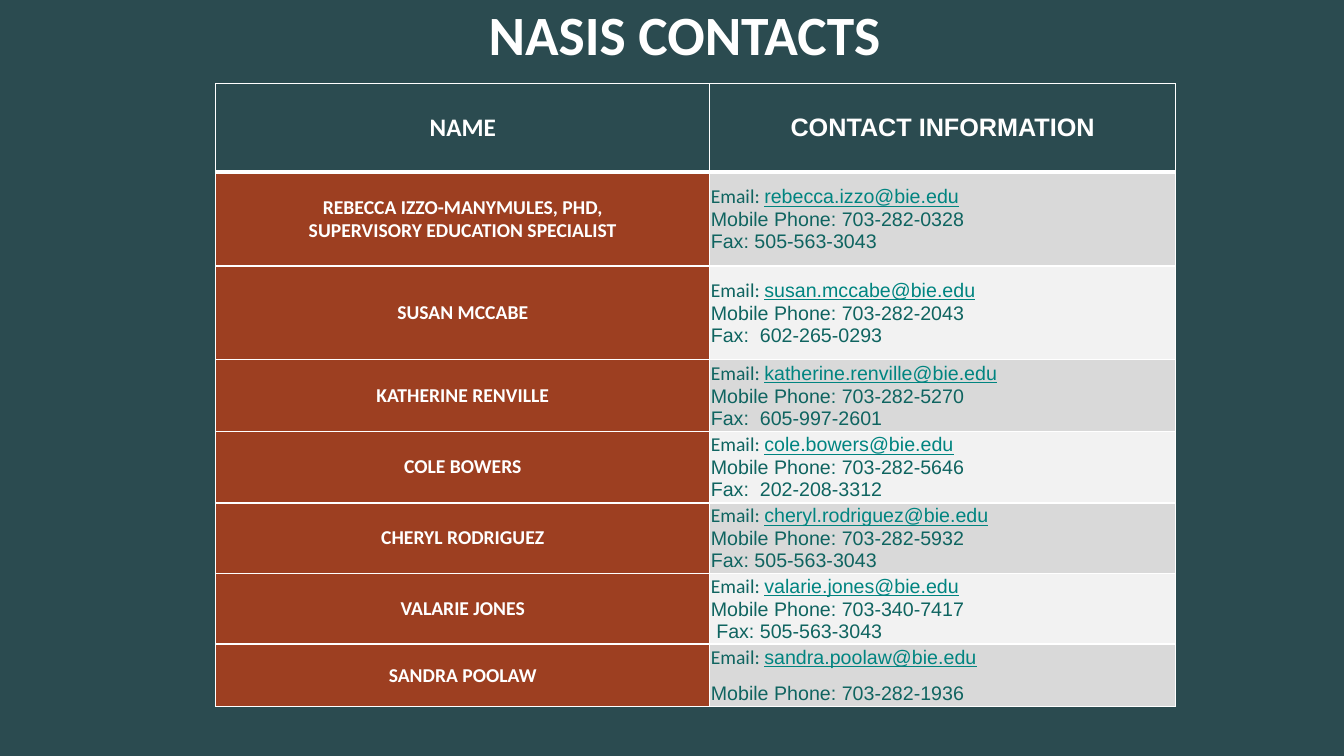
"""Build the NASIS contacts slide with its table of names and contact details."""
from lxml.etree import SubElement
from pptx import Presentation
from pptx.dml.color import RGBColor
from pptx.enum.text import MSO_ANCHOR, PP_ALIGN
from pptx.oxml.ns import qn
from pptx.util import Inches, Pt

WHITE = RGBColor(0xFF, 0xFF, 0xFF)
SLATE = RGBColor(0x2B, 0x4B, 0x50)
RUST = RGBColor(0x9D, 0x3F, 0x21)
TEAL = RGBColor(0x0F, 0x64, 0x60)
LINK = RGBColor(0x00, 0x84, 0x80)
BANDS = [RGBColor(0xD9, 0xD9, 0xD9), RGBColor(0xF2, 0xF2, 0xF2)]

CONTACTS = [
    ("REBECCA IZZO-MANYMULES, PHD,\nSUPERVISORY EDUCATION SPECIALIST", "rebecca.izzo@bie.edu",
     ["Mobile Phone: 703-282-0328", "Fax: 505-563-3043"]),
    ("SUSAN MCCABE", "susan.mccabe@bie.edu",
     ["Mobile Phone: 703-282-2043", "Fax:  602-265-0293"]),
    ("KATHERINE RENVILLE", "katherine.renville@bie.edu",
     ["Mobile Phone: 703-282-5270", "Fax:  605-997-2601"]),
    ("COLE BOWERS", "cole.bowers@bie.edu",
     ["Mobile Phone: 703-282-5646", "Fax:  202-208-3312"]),
    ("CHERYL RODRIGUEZ", "cheryl.rodriguez@bie.edu",
     ["Mobile Phone: 703-282-5932", "Fax: 505-563-3043"]),
    ("VALARIE JONES", "valarie.jones@bie.edu",
     ["Mobile Phone: 703-340-7417", " Fax: 505-563-3043"]),
    ("SANDRA POOLAW", "sandra.poolaw@bie.edu",
     ["Mobile Phone: 703-282-1936"]),
]
COL_WIDTHS = [4.9, 4.62]
ROW_HEIGHTS = [0.88, 0.93, 0.93, 0.71, 0.71, 0.7, 0.7, 0.62]


def style_font(font, name, size, color, bold=False):
    font.name = name
    font.size = Pt(size)
    font.bold = bold
    font.color.rgb = color


def style_cell(cell, fill, top=1, bottom=1):
    tcPr = cell._tc.get_or_add_tcPr()
    for side, width in (("L", 1), ("R", 1), ("T", top), ("B", bottom)):
        ln = SubElement(tcPr, qn(f"a:ln{side}"), w=str(Pt(width)))
        SubElement(SubElement(ln, qn("a:solidFill")), qn("a:srgbClr"), val=str(WHITE))
    cell.fill.solid()
    cell.fill.fore_color.rgb = fill
    cell.vertical_anchor = MSO_ANCHOR.MIDDLE
    cell.margin_left = cell.margin_right = Inches(0.01)
    cell.margin_top = cell.margin_bottom = Inches(0.01)


prs = Presentation()
prs.slide_width, prs.slide_height = Inches(13.33), Inches(7.5)
s = prs.slides.add_slide(prs.slide_layouts[5])
s.background.fill.solid()
s.background.fill.fore_color.rgb = SLATE

title = s.shapes.title
title.left, title.top = Inches(1.32), Inches(0)
title.width, title.height = Inches(10.94), Inches(0.75)
tf = title.text_frame
tf.text = "NASIS CONTACTS"
tf.vertical_anchor = MSO_ANCHOR.MIDDLE
p = tf.paragraphs[0]
p.alignment = PP_ALIGN.CENTER
p.line_spacing = 0.9
style_font(p.runs[0].font, "Calibri", 39.6, WHITE, True)

table = s.shapes.add_table(len(ROW_HEIGHTS), len(COL_WIDTHS), Inches(2.14), Inches(0.83),
                           Inches(sum(COL_WIDTHS)), Inches(sum(ROW_HEIGHTS))).table
table.horz_banding = False
for col, width in zip(table.columns, COL_WIDTHS):
    col.width = Inches(width)
for row, height in zip(table.rows, ROW_HEIGHTS):
    row.height = Inches(height)

for c, (heading, face) in enumerate([("NAME", "Calibri"), ("CONTACT INFORMATION", "Arial")]):
    cell = table.cell(0, c)
    style_cell(cell, SLATE, bottom=3)
    cell.text_frame.text = heading
    p = cell.text_frame.paragraphs[0]
    p.alignment = PP_ALIGN.CENTER
    style_font(p.runs[0].font, face, 18, WHITE, True)

for i, (name, email, numbers) in enumerate(CONTACTS):
    top = 3 if i == 0 else 1
    name_cell, info_cell = table.cell(i + 1, 0), table.cell(i + 1, 1)
    style_cell(name_cell, RUST, top)
    style_cell(info_cell, BANDS[i % 2], top)

    name_cell.text_frame.text = name
    for p in name_cell.text_frame.paragraphs:
        p.alignment = PP_ALIGN.CENTER
        style_font(p.runs[0].font, "Calibri", 14, WHITE, True)

    tf = info_cell.text_frame
    tf.text = "\n".join(["Email: "] + numbers)
    for p in tf.paragraphs:
        style_font(p.runs[0].font, "Arial", 14, TEAL)
    p = tf.paragraphs[0]
    p.runs[0].font.name = "Calibri"
    r = p.add_run()
    r.text = email
    style_font(r.font, "Arial", 14, LINK)
    r.font.underline = True

tf.paragraphs[1].space_before = Pt(9)

prs.save("out.pptx")
